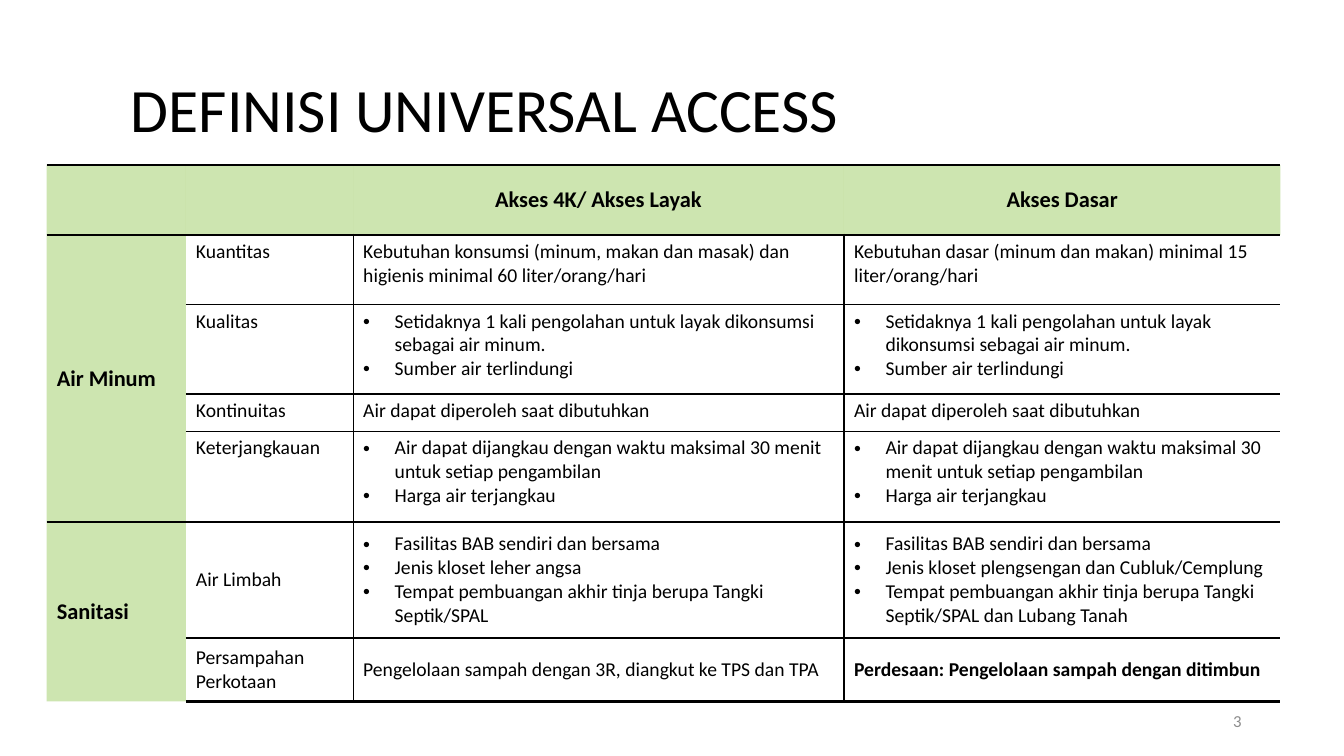
import pptx
import pptx.util
import pptx.dml.color
import pptx.enum.text
import pptx.oxml
import pptx.oxml.ns

Pt = pptx.util.Pt
Align = pptx.enum.text.PP_ALIGN
Anchor = pptx.enum.text.MSO_ANCHOR

TITLE = "DEFINISI UNIVERSAL ACCESS"
PAGE_NUMBER = "3"
HEADINGS = ["", "", "Akses 4K/ Akses Layak", "Akses Dasar"]
QUALITY = ["Setidaknya 1 kali pengolahan untuk layak dikonsumsi sebagai air minum.",
           "Sumber air terlindungi"]
CONTINUITY = "Air dapat diperoleh saat dibutuhkan"
AFFORDABILITY = ["Air dapat dijangkau dengan waktu maksimal 30 menit untuk setiap pengambilan",
                 "Harga air terjangkau"]
GROUPS = [
    ("Air Minum", [
        ("Kuantitas",
         "Kebutuhan konsumsi (minum, makan dan masak) dan higienis minimal 60 liter/orang/hari",
         "Kebutuhan dasar (minum dan makan) minimal 15 liter/orang/hari"),
        ("Kualitas", QUALITY, QUALITY),
        ("Kontinuitas", CONTINUITY, CONTINUITY),
        ("Keterjangkauan", AFFORDABILITY, AFFORDABILITY),
    ]),
    ("Sanitasi", [
        ("Air Limbah",
         ["Fasilitas BAB sendiri dan bersama",
          "Jenis kloset leher angsa",
          "Tempat pembuangan akhir tinja berupa Tangki Septik/SPAL"],
         ["Fasilitas BAB sendiri dan bersama",
          "Jenis kloset plengsengan dan Cubluk/Cemplung",
          "Tempat pembuangan akhir tinja berupa Tangki Septik/SPAL dan Lubang Tanah"]),
        ("Persampahan Perkotaan",
         "Pengelolaan sampah dengan 3R, diangkut ke TPS dan TPA",
         "Perdesaan: Pengelolaan sampah dengan ditimbun"),
    ]),
]
MIDDLE_GROUP = "Sanitasi"
BOLD_TEXT = GROUPS[1][1][1][2]

THEME = {
    "font": "Calibri",
    "black": "000000",
    "gray": "8C8C8C",
    "green": "B9DA8F",
    "green_alpha": 70,
    "title": 44,
    "heading": 16,
    "body": 14,
    "number": 12,
    "thick": 2,
    "thin": 1,
}
PLAIN_STYLE = "{2D5ABB26-0587-4C30-8999-92F81FD0307C}"
BULLET_INDENT = 22.5
TABLE_LEFT, TABLE_TOP = 33.4, 118
COLUMN_WIDTHS = [99.4, 119.5, 350.6, 311.8]
ROW_HEIGHTS = [49.7, 49.7, 64.1, 26.6, 64.8, 82.8, 45.4]


def set_values(target, values):
    for name, value in values.items():
        setattr(target, name, value)


def add_xml(parent, xml):
    namespace = pptx.oxml.ns.nsdecls("a")
    parent.append(pptx.oxml.parse_xml(xml.replace(" ", f" {namespace} ", 1)))


def write(frame, content, size, bold=False, color="black", align=Align.LEFT):
    lines = content if isinstance(content, list) else [content]
    for index, line in enumerate(lines):
        paragraph = frame.paragraphs[0] if index == 0 else frame.add_paragraph()
        paragraph.alignment = align
        run = paragraph.add_run()
        run.text = line
        set_values(run.font, {"name": THEME["font"], "size": Pt(THEME[size]), "bold": bold})
        run.font.color.rgb = pptx.dml.color.RGBColor.from_string(THEME[color])
        if isinstance(content, list):
            properties = paragraph._p.get_or_add_pPr()
            properties.set("marL", str(Pt(BULLET_INDENT)))
            properties.set("indent", str(-Pt(BULLET_INDENT)))
            add_xml(properties, '<a:buFont typeface="Arial"/>')
            add_xml(properties, '<a:buChar char="•"/>')


def add_text(slide, box, content, **formats):
    frame = slide.shapes.add_textbox(*map(Pt, box)).text_frame
    set_values(frame, {"word_wrap": True, "vertical_anchor": Anchor.MIDDLE})
    write(frame, content, **formats)
    return frame


def horizontal_weight(edge, column, group_edges):
    if edge in (0, 1, len(ROW_HEIGHTS)):
        return THEME["thick"]
    return THEME["thin"] if column > 0 or edge in group_edges else 0


def vertical_weight(edge, row):
    return THEME["thin"] if row > 0 and edge in (2, 3) else 0


def draw_borders(cell, row, column, group_edges):
    weights = {
        "lnL": vertical_weight(column, row),
        "lnR": vertical_weight(column + 1, row),
        "lnT": horizontal_weight(row, column, group_edges),
        "lnB": horizontal_weight(row + 1, column, group_edges),
    }
    for side, weight in weights.items():
        fill = f'<a:solidFill><a:srgbClr val="{THEME["black"]}"/></a:solidFill>' if weight else "<a:noFill/>"
        add_xml(cell._tc.get_or_add_tcPr(), f'<a:{side} w="{Pt(weight)}">{fill}</a:{side}>')


def fill_cell(cell, green):
    if not green:
        cell.fill.background()
        return
    cell.fill.solid()
    cell.fill.fore_color.rgb = pptx.dml.color.RGBColor.from_string(THEME["green"])
    color = cell._tc.tcPr.find(pptx.oxml.ns.qn("a:solidFill"))[0]
    add_xml(color, f'<a:alpha val="{THEME["green_alpha"] * 1000}"/>')


def add_access_table(slide):
    shape = slide.shapes.add_table(
        len(ROW_HEIGHTS), len(COLUMN_WIDTHS), Pt(TABLE_LEFT), Pt(TABLE_TOP),
        Pt(sum(COLUMN_WIDTHS)), Pt(sum(ROW_HEIGHTS)))
    table = shape.table
    set_values(table, {"first_row": False, "horz_banding": False})
    next(shape.element.iter(pptx.oxml.ns.qn("a:tableStyleId"))).text = PLAIN_STYLE
    for column, width in zip(table.columns, COLUMN_WIDTHS):
        column.width = Pt(width)
    for row, height in zip(table.rows, ROW_HEIGHTS):
        row.height = Pt(height)

    group_edges = [1]
    for _, entries in GROUPS:
        group_edges.append(group_edges[-1] + len(entries))
    for row in range(len(ROW_HEIGHTS)):
        for column in range(len(COLUMN_WIDTHS)):
            cell = table.cell(row, column)
            draw_borders(cell, row, column, group_edges)
            fill_cell(cell, row == 0 or column == 0)

    for column, heading in enumerate(HEADINGS):
        if heading:
            cell = table.cell(0, column)
            cell.vertical_anchor = Anchor.MIDDLE
            write(cell.text_frame, heading, "heading", bold=True, align=Align.CENTER)

    for (group, entries), first_row in zip(GROUPS, group_edges):
        group_cell = table.cell(first_row, 0)
        group_cell.merge(table.cell(first_row + len(entries) - 1, 0))
        group_cell.vertical_anchor = Anchor.MIDDLE
        write(group_cell.text_frame, group, "heading", bold=True)
        for row, entry in enumerate(entries, first_row):
            for column, content in enumerate(entry, 1):
                cell = table.cell(row, column)
                cell.vertical_anchor = Anchor.MIDDLE if group == MIDDLE_GROUP else Anchor.TOP
                write(cell.text_frame, content, "body", bold=content == BOLD_TEXT)


def main():
    presentation = pptx.Presentation()
    set_values(presentation, {"slide_width": Pt(960), "slide_height": Pt(540)})
    slide = presentation.slides.add_slide(presentation.slide_layouts[6])
    title = add_text(slide, (86.4, 23, 792, 114.5), TITLE, size="title")
    title.paragraphs[0].line_spacing = 0.9
    add_access_table(slide)
    add_text(slide, (678, 500.5, 216, 28.8), PAGE_NUMBER,
             size="number", color="gray", align=Align.RIGHT)
    presentation.save("out.pptx")


if __name__ == "__main__":
    main()
